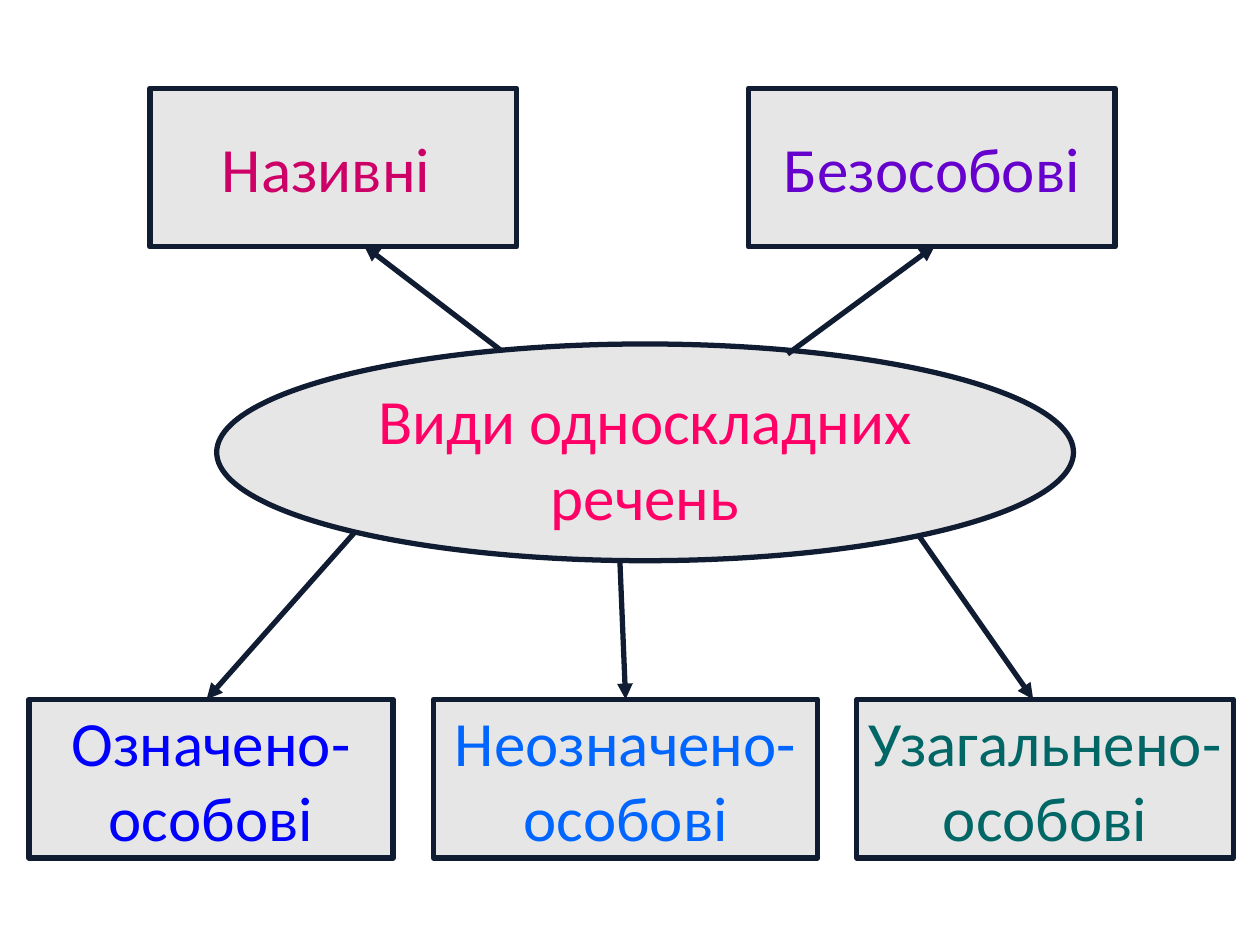
"""Build a slide mapping the kinds of one-member sentences."""
from dataclasses import dataclass
from typing import Optional

from lxml.etree import SubElement
from pptx import Presentation
from pptx.dml.color import RGBColor
from pptx.enum.shapes import MSO_CONNECTOR, MSO_SHAPE
from pptx.enum.text import MSO_ANCHOR, PP_ALIGN
from pptx.oxml.ns import qn
from pptx.shapes.autoshape import Shape
from pptx.slide import Slide
from pptx.util import Inches, Pt


@dataclass(frozen=True)
class Theme:
    font: str = "Calibri"
    size: int = 36
    fill: str = "E7E6E6"
    line: str = "101C32"
    line_width: int = 3
    title: str = "FF0066"
    nominal: str = "CC0066"
    impersonal: str = "6600CC"
    definite: str = "0000FF"
    indefinite: str = "0066FF"
    generalized: str = "006666"


@dataclass(frozen=True)
class Node:
    text: str
    color: str
    left: float
    top: float
    width: float
    height: float = 1.26
    kind: MSO_SHAPE = MSO_SHAPE.RECTANGLE
    anchor: MSO_ANCHOR = MSO_ANCHOR.MIDDLE
    wrap: bool = False


@dataclass(frozen=True)
class Arrow:
    x1: float
    y1: float
    x2: float
    y2: float
    target: Optional[Node] = None


THEME = Theme()
TOP_ROW, BOTTOM_ROW = 0.7, 5.55
TOP_ROW_END = 1.95

TITLE = Node("Види односкладних речень", THEME.title, 1.72, 2.73, 6.8, 1.72,
             MSO_SHAPE.OVAL, MSO_ANCHOR.TOP, True)
DEFINITE = Node("Означено-\nособові", THEME.definite, 0.23, BOTTOM_ROW, 2.89)
INDEFINITE = Node("Неозначено-\nособові", THEME.indefinite, 3.44, BOTTOM_ROW, 3.05)
IMPERSONAL = Node("Безособові", THEME.impersonal, 5.94, TOP_ROW, 2.91)
NOMINAL = Node("Називні ", THEME.nominal, 1.19, TOP_ROW, 2.91)
GENERALIZED = Node("Узагальнено-\nособові", THEME.generalized, 6.8, BOTTOM_ROW, 2.99)
NODES = (TITLE, DEFINITE, INDEFINITE, IMPERSONAL, NOMINAL, GENERALIZED)

ARROWS_BEHIND = (
    Arrow(7.27, 4.22, 8.2, BOTTOM_ROW),
    Arrow(2.82, 4.22, 1.64, BOTTOM_ROW),
    Arrow(4.21, 2.96, 2.89, TOP_ROW_END),
)
ARROWS_FRONT = (
    Arrow(6.25, 2.81, 7.42, TOP_ROW_END),
    Arrow(4.92, 4.45, 4.97, BOTTOM_ROW, INDEFINITE),
)


def rgb(value: str) -> RGBColor:
    return RGBColor.from_string(value)


def add_node(s: Slide, node: Node) -> Shape:
    sp = s.shapes.add_shape(node.kind, Inches(node.left), Inches(node.top),
                            Inches(node.width), Inches(node.height))
    sp.shadow.inherit = False
    sp.fill.solid()
    sp.fill.fore_color.rgb = rgb(THEME.fill)
    sp.line.color.rgb = rgb(THEME.line)
    sp.line.width = Pt(THEME.line_width)
    tf = sp.text_frame
    tf.text = node.text
    tf.word_wrap = node.wrap
    tf.vertical_anchor = node.anchor
    for p in tf.paragraphs:
        p.alignment = PP_ALIGN.CENTER
        for r in p.runs:
            r.font.name = THEME.font
            r.font.size = Pt(THEME.size)
            r.font.color.rgb = rgb(node.color)
    return sp


def add_arrow(s: Slide, arrow: Arrow, target: Optional[Shape] = None) -> None:
    cxn = s.shapes.add_connector(MSO_CONNECTOR.STRAIGHT, Inches(arrow.x1), Inches(arrow.y1),
                                 Inches(arrow.x2), Inches(arrow.y2))
    if target is not None:
        cxn.end_connect(target, 0)
    cxn.line.color.rgb = rgb(THEME.line)
    cxn.line.width = Pt(THEME.line_width)
    SubElement(cxn.line._get_or_add_ln(), qn("a:tailEnd"), type="triangle")
    SubElement(cxn._element.spPr, qn("a:effectLst"))


def main() -> None:
    prs = Presentation()
    prs.slide_width, prs.slide_height = Inches(10), Inches(7.5)
    s = prs.slides.add_slide(prs.slide_layouts[6])
    for arrow in ARROWS_BEHIND:
        add_arrow(s, arrow)
    shapes = {node: add_node(s, node) for node in NODES}
    for arrow in ARROWS_FRONT:
        add_arrow(s, arrow, shapes.get(arrow.target))
    prs.save("out.pptx")


if __name__ == "__main__":
    main()
